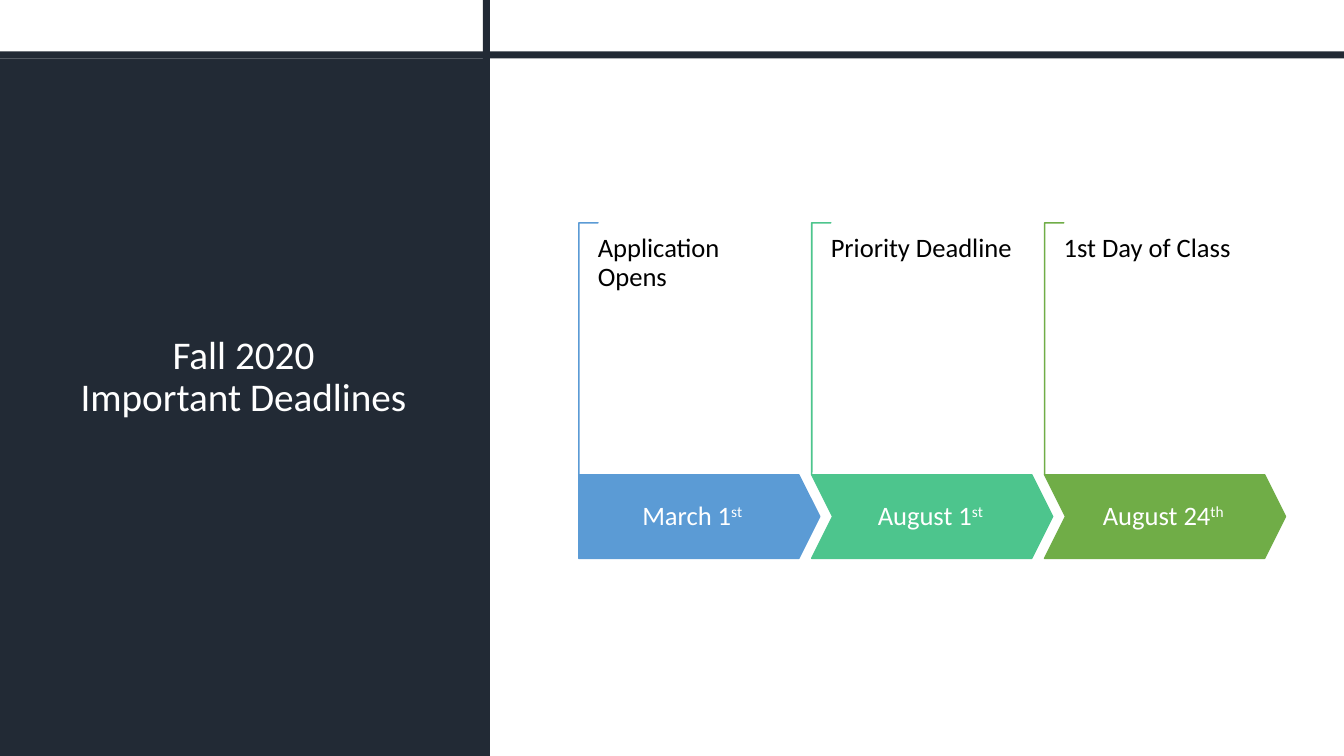
from dataclasses import dataclass

import lxml.etree
import pptx
import pptx.dml.color
import pptx.enum.shapes
import pptx.enum.text
import pptx.oxml.ns
import pptx.util

Inches = pptx.util.Inches
Kind = pptx.enum.shapes.MSO_SHAPE
Align = pptx.enum.text.PP_ALIGN
Anchor = pptx.enum.text.MSO_ANCHOR

COLORS = {
    "navy": "222A35",
    "white": "FFFFFF",
    "black": "000000",
    "blue": "5B9BD5",
    "teal": "4DC58D",
    "green": "70AD47",
}
LEFT, STEP = 5.74, 2.31


@dataclass
class Stage:
    label: str
    date: str
    suffix: str
    color: str
    kind: Kind


STAGES = [
    Stage("Application Opens", "March 1", "st ", "blue", Kind.PENTAGON),
    Stage("Priority Deadline", "August 1", "st ", "teal", Kind.CHEVRON),
    Stage("1st Day of Class", "August 24", "th ", "green", Kind.CHEVRON),
]


def rgb(name: str) -> pptx.dml.color.RGBColor:
    return pptx.dml.color.RGBColor.from_string(COLORS[name])


def add_shape(slide, kind: Kind, box: tuple, fill: str, line: str = ""):
    shape = slide.shapes.add_shape(kind, *map(Inches, box))
    shape.shadow.inherit = False
    shape.fill.solid()
    shape.fill.fore_color.rgb = rgb(fill)
    if line:
        shape.line.color.rgb = rgb(line)
        shape.line.width = pptx.util.Pt(1)
    else:
        shape.line.fill.background()
    return shape


def write(shape, text: str, *, size: int, color: str, align: Align = Align.CENTER,
          anchor: Anchor = Anchor.MIDDLE, inset: tuple = (0.1, 0.05), suffix: str = "") -> None:
    frame = shape.text_frame
    frame.word_wrap = True
    frame.auto_size = pptx.enum.text.MSO_AUTO_SIZE.NONE
    frame.vertical_anchor = anchor
    frame.margin_left = frame.margin_right = Inches(inset[0])
    frame.margin_top = frame.margin_bottom = Inches(inset[1])
    para = frame.paragraphs[0]
    para.text = text
    para.alignment = align
    para.line_spacing = 0.9
    if suffix:
        raised = para.add_run()
        raised.text = suffix
        raised.font._element.set("baseline", "30000")
    for run in para.runs:
        run.font.size = pptx.util.Pt(size)
        run.font.name = "Calibri"
        run.font.color.rgb = rgb(color)
    # Line breaks take the same size as the text
    for brk in para._p.findall(pptx.oxml.ns.qn("a:br")):
        lxml.etree.SubElement(brk, pptx.oxml.ns.qn("a:rPr"), sz=str(size * 100))


def add_stage(slide, stage: Stage, left: float) -> None:
    # Thin bracket rising from the arrow
    frame = add_shape(slide, Kind.HALF_FRAME, (left, 2.21, 0.19, 2.5), "white", stage.color)
    frame.adjustments[0] = frame.adjustments[1] = 0.01

    # Arrow with the date
    arrow = add_shape(slide, stage.kind, (left, 4.71, 2.39, 0.83), stage.color, stage.color)
    arrow.adjustments[0] = 0.25
    write(arrow, stage.date, suffix=stage.suffix, size=19, color="white", inset=(0.13, 0.26))

    # Label
    label = slide.shapes.add_textbox(*map(Inches, (left + 0.19, 2.33, 1.94, 2.05)))
    write(label, stage.label, size=19, color="black", align=Align.LEFT,
          anchor=Anchor.TOP, inset=(0, 0))


def main() -> None:
    deck = pptx.Presentation()
    deck.slide_width, deck.slide_height = Inches(13.33), Inches(7.5)
    slide = deck.slides.add_slide(deck.slide_layouts[5])

    # Side panel, placed behind the title
    panel = add_shape(slide, Kind.RECTANGLE, (0, 0.58, 4.86, 6.92), "navy")
    slide.shapes._spTree.insert(2, panel._element)

    # Title
    title = slide.shapes.title
    title.left, title.top, title.width, title.height = map(Inches, (0.66, 0.84, 3.51, 5.82))
    write(title, "Fall 2020\vImportant Deadlines", size=28, color="white")

    # Crossing bars
    for box in ((4.79, 0, 0.07, 7.5), (0, 0.51, 13.33, 0.07)):
        add_shape(slide, Kind.RECTANGLE, box, "navy")

    # Timeline
    for index, stage in enumerate(STAGES):
        add_stage(slide, stage, LEFT + index * STEP)

    deck.save("out.pptx")


if __name__ == "__main__":
    main()
